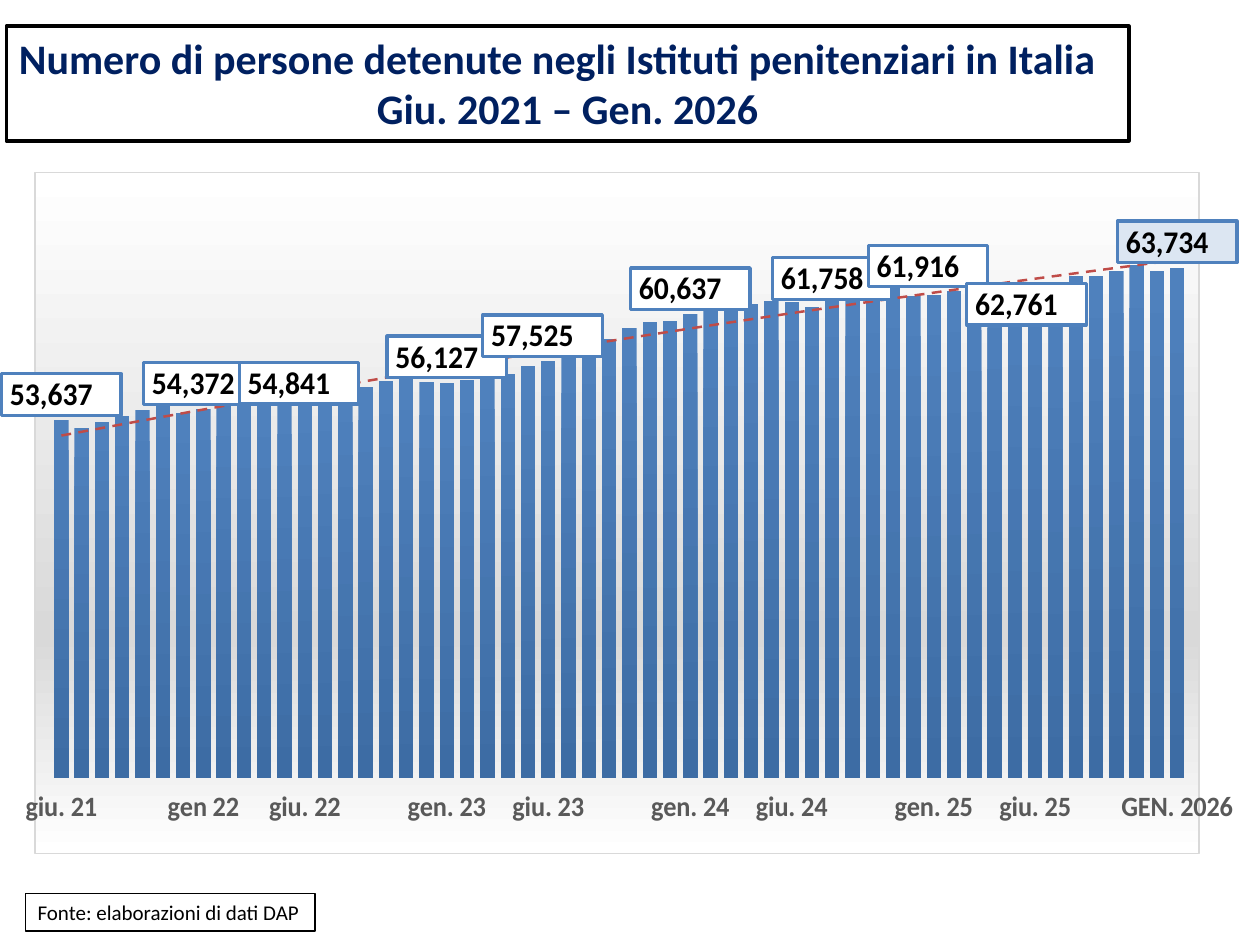
from lxml.etree import SubElement
from pptx import Presentation
from pptx.chart.data import CategoryChartData
from pptx.dml.color import RGBColor
from pptx.enum.chart import XL_CHART_TYPE, XL_LABEL_POSITION, XL_TICK_LABEL_POSITION, XL_TICK_MARK
from pptx.enum.text import MSO_ANCHOR, MSO_AUTO_SIZE, PP_ALIGN
from pptx.oxml import parse_xml
from pptx.oxml.ns import nsdecls, qn
from pptx.util import Pt

FONT = "Calibri"
DETAINEES = [
    53637, 53129, 53557, 53930, 54307, 54593, 54134, 54372, 54635, 54609, 54595, 54771,
    54841, 54979, 55637, 55835, 56225, 56524, 56196, 56127, 56319, 56605, 56674, 57230,
    57525, 57749, 58428, 58987, 59715, 60116, 60166, 60637, 60924, 61049, 61297, 61547,
    61480, 61133, 61758, 61862, 62110, 62464, 61861, 61916, 62165, 62281, 62445, 62761,
    62728, 62569, 63167, 63198, 63493, 63868, 63499, 63734,
]
MONTHS = {0: "giu. 21", 7: "gen 22", 12: "giu. 22", 19: "gen. 23", 24: "giu. 23",
          31: "gen. 24", 36: "giu. 24", 43: "gen. 25", 48: "giu. 25", 55: "GEN. 2026"}
LABEL_SHIFTS = {0: (0, 0), 7: (0, 0), 12: (-0.005, 0.01), 19: (0, 0), 24: (-0.005, 0),
                31: (0, 0), 38: (0, 0.01), 43: (-0.005, -0.005), 47: (0.01, 0.07), 55: (0, 0)}


def color(value):
    return RGBColor.from_string(value)


def style_font(font, size, value, bold=False):
    font.name = FONT
    font.size = Pt(size)
    font.bold = bold
    font.color.rgb = color(value)


def solid(value):
    return f'<a:solidFill><a:srgbClr val="{value}"/></a:solidFill>'


def vertical_gradient(stops):
    marks = "".join(f'<a:gs pos="{position * 1000}"><a:srgbClr val="{value}"/></a:gs>'
                    for position, value in stops)
    return f'<a:gradFill><a:gsLst>{marks}</a:gsLst><a:lin ang="5400000" scaled="0"/></a:gradFill>'


def chart_format(fill, line, width, dash="solid"):
    return parse_xml(
        f'<c:spPr {nsdecls("c", "a")}>{fill}<a:ln w="{Pt(width)}">{solid(line)}'
        f'<a:prstDash val="{dash}"/></a:ln></c:spPr>')


def manual_layout(**settings):
    parts = "".join(f'<c:{key} val="{value}"/>' for key, value in settings.items())
    return parse_xml(
        f'<c:layout {nsdecls("c")}><c:manualLayout>{parts}</c:manualLayout></c:layout>')


def fill_box(shape, box, border, lines, size, value, bold=False):
    shape.left, shape.top, shape.width, shape.height = (Pt(length) for length in box)
    shape.fill.solid()
    shape.fill.fore_color.rgb = color("FFFFFF")
    shape.line.color.rgb = color("000000")
    shape.line.width = Pt(border)
    frame = shape.text_frame
    frame.word_wrap = True
    frame.auto_size = MSO_AUTO_SIZE.NONE
    frame.vertical_anchor = MSO_ANCHOR.TOP
    for index, (text, alignment) in enumerate(lines):
        paragraph = frame.paragraphs[0] if index == 0 else frame.add_paragraph()
        paragraph.alignment = alignment
        run = paragraph.add_run()
        run.text = text
        style_font(run.font, size, value, bold)


def add_heading(slide, box):
    fill_box(slide.shapes.title, box, 2, [
        ("Numero di persone detenute negli Istituti penitenziari in Italia", PP_ALIGN.LEFT),
        ("Giu. 2021 – Gen. 2026", PP_ALIGN.CENTER),
    ], 24, "002060", True)


def add_source_note(slide, box):
    note = slide.shapes.add_textbox(*(Pt(length) for length in box))
    fill_box(note, box, 0.75, [("Fonte: elaborazioni di dati DAP", PP_ALIGN.LEFT)],
             12, "000000")


def label_months(series):
    series.data_labels.show_value = False
    last = len(DETAINEES) - 1
    for month, (across, down) in LABEL_SHIFTS.items():
        label = series.points[month].data_label
        style_font(label.font, 18, "000000", True)
        label.position = XL_LABEL_POSITION.OUTSIDE_END
        element = series.data_labels._element.xpath(f'c:dLbl[c:idx/@val="{month}"]')[0]
        for old in element.xpath("c:spPr"):
            element.remove(old)
        number_format = parse_xml(
            f'<c:numFmt {nsdecls("c")} formatCode="_-* #,##0\\ _€_-" sourceLinked="0"/>')
        box_format = chart_format(solid("DCE6F2" if month == last else "FFFFFF"), "4F81BD", 2)
        text_format = element.find(qn("c:txPr"))
        text_format.addprevious(number_format)
        text_format.addprevious(box_format)
        if across or down:
            number_format.addprevious(manual_layout(x=across, y=down))


def add_trend(series):
    trend = parse_xml(f'<c:trendline {nsdecls("c")}><c:trendlineType val="poly"/>'
                      '<c:order val="2"/><c:dispRSqr val="0"/><c:dispEq val="0"/></c:trendline>')
    trend.insert(0, chart_format("", "BF4C48", 1.5, "dash"))
    series._element.find(qn("c:cat")).addprevious(trend)


def format_axes(chart):
    months = chart.category_axis
    months.major_tick_mark = months.minor_tick_mark = XL_TICK_MARK.NONE
    months.tick_label_position = XL_TICK_LABEL_POSITION.LOW
    months.has_major_gridlines = False
    months.format.line.fill.background()
    style_font(months.tick_labels.font, 16, "595959", True)
    direction = months._element.find(qn("c:txPr")).find(qn("a:bodyPr"))
    direction.set("rot", "-60000000")
    direction.set("vert", "horz")
    skip = SubElement(months._element, qn("c:tickLblSkip"))
    skip.set("val", "1")
    months._element.find(qn("c:noMultiLvlLbl")).addprevious(skip)
    people = chart.value_axis
    people.minimum_scale, people.maximum_scale = 30000, 70000
    people.has_major_gridlines = False
    people.visible = False


def add_detainee_chart(slide, box):
    data = CategoryChartData(number_format="#,##0")
    data.categories = [MONTHS.get(month, "") for month in range(len(DETAINEES))]
    data.add_series("Series 1", DETAINEES)
    chart = slide.shapes.add_chart(
        XL_CHART_TYPE.COLUMN_CLUSTERED, *(Pt(length) for length in box), data).chart
    chart.has_legend = False
    chart.has_title = False
    style_font(chart.font, 11, "000000")
    background = vertical_gradient([(0, "FFFFFF"), (68, "D9D9D9"), (100, "FFFFFF")])
    chart._chartSpace.find(qn("c:chart")).addnext(chart_format(background, "D9D9D9", 0.75))
    plot_area = chart._chartSpace.chart.plotArea
    for old in plot_area.findall(qn("c:layout")):
        plot_area.remove(old)
    plot_area.insert(0, manual_layout(layoutTarget="inner", xMode="edge", yMode="edge",
                                      x=0.014, y=0.001, w=0.976, h=0.888))
    plot = chart.plots[0]
    plot.gap_width = 41
    plot.vary_by_categories = False
    series = plot.series[0]
    series.invert_if_negative = False
    series.format.fill.gradient()
    series.format.fill.gradient_angle = 270
    for stop, value in zip(series.format.fill.gradient_stops, ("4F81BD", "3D6CA4")):
        stop.color.rgb = color(value)
    format_axes(chart)
    label_months(series)
    add_trend(series)


def main():
    presentation = Presentation()
    presentation.slide_width, presentation.slide_height = Pt(720), Pt(540)
    slide = presentation.slides.add_slide(presentation.slide_layouts[5])
    add_heading(slide, (3.6, 15, 641.5, 65.5))
    add_source_note(slide, (14.4, 510.5, 165.6, 21.6))
    add_detainee_chart(slide, (0, 98, 707.8, 390.2))
    presentation.save("out.pptx")


if __name__ == "__main__":
    main()
